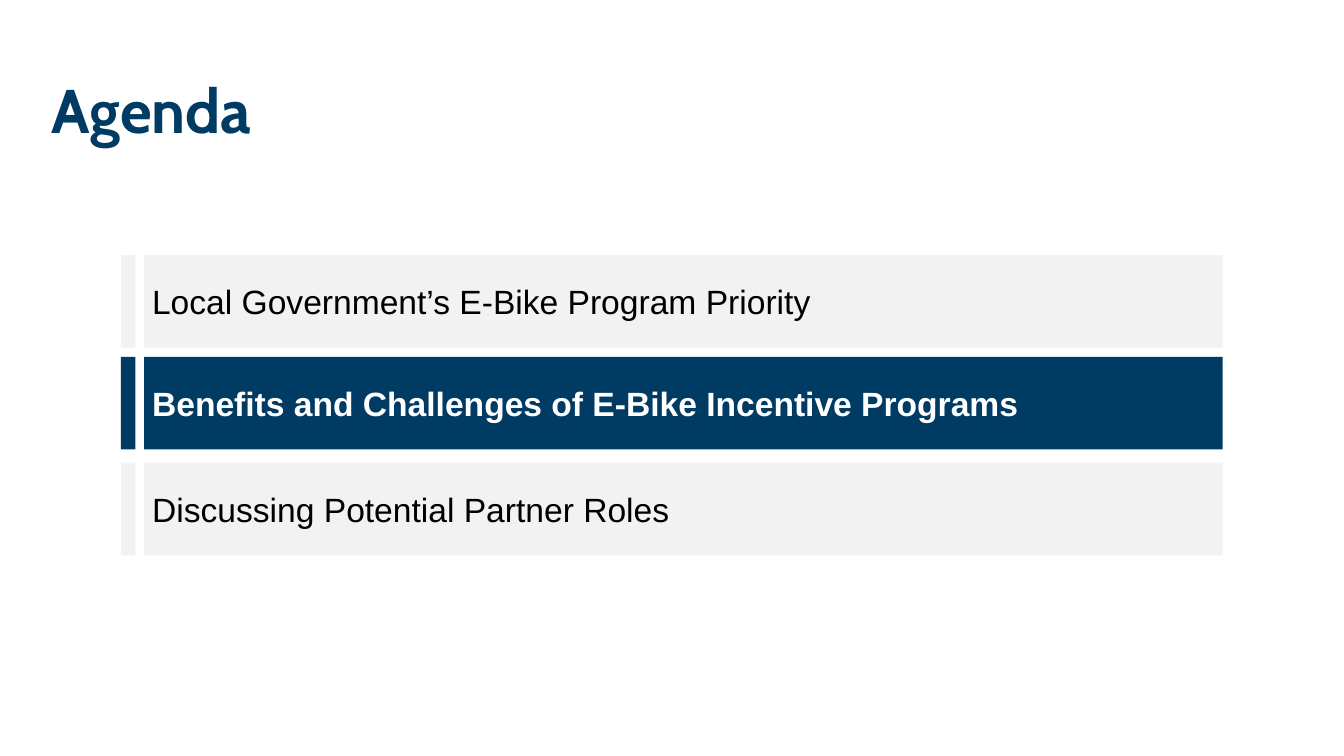
from pptx import Presentation
from pptx.dml.color import RGBColor
from pptx.enum.shapes import MSO_SHAPE as Shape
from pptx.enum.text import MSO_ANCHOR as Anchor, PP_ALIGN as Align
from pptx.util import Pt

# Content: agenda item, top edge in points, whether it is the current one
HEADING = "Agenda"
AGENDA = [
    ("Local Government’s E-Bike Program Priority", 182.2, False),
    ("Benefits and Challenges of E-Bike Incentive Programs", 254.9, True),
    ("Discussing Potential Partner Roles", 330.5, False),
]

# Formats
NAVY, GREY, WHITE, BLACK = "003B63", "F2F2F2", "FFFFFF", "000000"
HEADING_FONT = {"name": "Cabin", "size": Pt(44), "bold": True}
ITEM_FONT = {"name": "Arial", "size": Pt(24)}
ITEM_FRAME = {
    "word_wrap": True, "vertical_anchor": Anchor.MIDDLE,
    "margin_left": Pt(5.76), "margin_right": Pt(5.76),
    "margin_top": 0, "margin_bottom": 0,
}

# Layout in points
TAB_LEFT, TAB_WIDTH = 86.4, 10.4
BAR_LEFT, BAR_WIDTH = 102.9, 770.4
ROW_HEIGHT = 66.2


def color(hex_value):
    return RGBColor.from_string(hex_value)


def apply(target, formats):
    for attribute, value in formats.items():
        setattr(target, attribute, value)


def add_block(slide, left, top, width, fill):
    block = slide.shapes.add_shape(
        Shape.RECTANGLE, Pt(left), Pt(top), Pt(width), Pt(ROW_HEIGHT))
    block.shadow.inherit = False
    block.fill.solid()
    block.fill.fore_color.rgb = color(fill)
    block.line.fill.background()
    return block


def add_item(slide, text, top, current):
    fill, ink = (NAVY, WHITE) if current else (GREY, BLACK)
    add_block(slide, TAB_LEFT, top, TAB_WIDTH, fill)
    bar = add_block(slide, BAR_LEFT, top, BAR_WIDTH, fill)
    apply(bar.text_frame, ITEM_FRAME)
    line = bar.text_frame.paragraphs[0]
    line.text = text
    line.alignment = Align.LEFT
    apply(line.runs[0].font, {**ITEM_FONT, "bold": current})
    line.runs[0].font.color.rgb = color(ink)


def add_heading(slide):
    heading = slide.shapes.title
    apply(heading, {"left": Pt(29.5), "top": Pt(28.8),
                    "width": Pt(902.2), "height": Pt(104.4)})
    heading.text_frame.vertical_anchor = Anchor.MIDDLE
    line = heading.text_frame.paragraphs[0]
    line.text = HEADING
    apply(line, {"alignment": Align.LEFT, "line_spacing": 0.9})
    apply(line.runs[0].font, HEADING_FONT)
    line.runs[0].font.color.rgb = color(NAVY)


def main():
    deck = Presentation()
    deck.slide_width, deck.slide_height = Pt(960), Pt(540)
    slide = deck.slides.add_slide(deck.slide_layouts[5])
    add_heading(slide)
    for item in AGENDA:
        add_item(slide, *item)
    deck.save("out.pptx")


if __name__ == "__main__":
    main()
